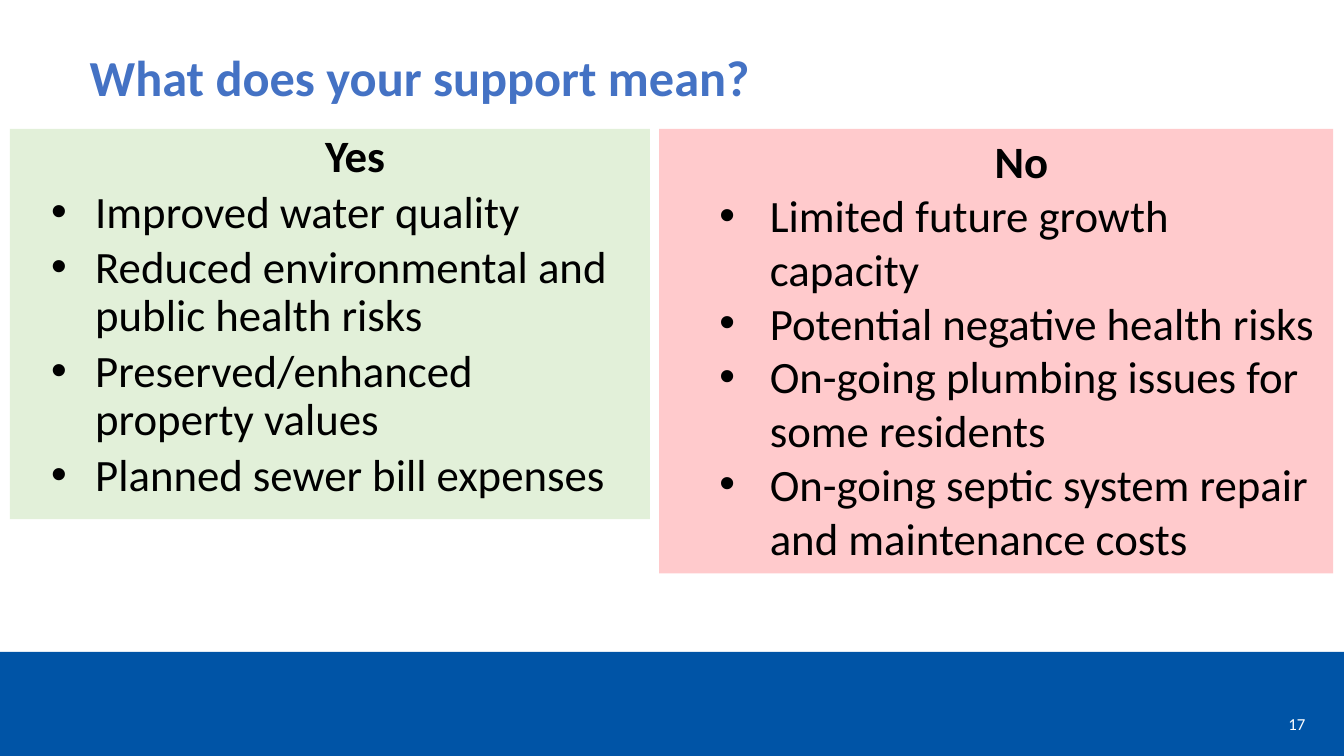
from lxml import etree
from pptx import Presentation
from pptx import util as u
from pptx.dml.color import RGBColor
from pptx.enum import shapes, text
from pptx.oxml.ns import qn

W, H = 33.87, 19.05
BAR_TOP = 16.43
PANEL_TOP = 3.25
TITLE = "What does your support mean?"
NUMBER = "17"
PANELS = [
    dict(head="Yes", left=0.25, width=16.13, height=9.83, fill="E2F0D9",
         alpha=None, indent=1.9, hang=1.11, spacing=0.9, before=5,
         items=["Improved water quality",
                "Reduced environmental and public health risks",
                "Preserved/enhanced property values",
                "Planned sewer bill expenses"]),
    dict(head="No", left=16.61, width=16.99, height=11.2, fill="FF7C80",
         alpha=40, indent=2.54, hang=1.27, spacing=1.0, before=0,
         items=["Limited future growth capacity",
                "Potential negative health risks",
                "On-going plumbing issues for some residents",
                "On-going septic system repair and maintenance costs"]),
]


def rgb(value):
    return RGBColor.from_string(value)


def add_rect(s, left, top, width, height, fill, alpha=None):
    sp = s.shapes.add_shape(shapes.MSO_SHAPE.RECTANGLE, u.Cm(left), u.Cm(top),
                            u.Cm(width), u.Cm(height))
    sp.shadow.inherit = False
    sp.fill.solid()
    sp.fill.fore_color.rgb = rgb(fill)
    sp.line.fill.background()
    if alpha is not None:
        clr = sp._element.spPr.find(qn("a:solidFill"))[0]
        etree.SubElement(clr, qn("a:alpha"), val=str(alpha * 1000))
    return sp


def add_box(s, left, top, width, height):
    sp = s.shapes.add_textbox(u.Cm(left), u.Cm(top), u.Cm(width), u.Cm(height))
    sp.text_frame.word_wrap = True
    sp.text_frame.vertical_anchor = text.MSO_ANCHOR.MIDDLE
    return sp


def write(tf, words, size=32, color="000000", bold=False, align="LEFT",
          indent=0, hang=0, spacing=1.0, before=0, bullet=False):
    first = not tf.paragraphs[0].runs
    p = tf.paragraphs[0] if first else tf.add_paragraph()
    pPr = p._p.get_or_add_pPr()
    pPr.set("marL", str(u.Cm(indent)))
    pPr.set("indent", str(-u.Cm(hang)))
    if bullet:
        etree.SubElement(pPr, qn("a:buFont"), typeface="Arial")
        etree.SubElement(pPr, qn("a:buChar"), char="•")
    p.alignment = getattr(text.PP_ALIGN, align)
    p.line_spacing = spacing
    p.space_before = u.Pt(0 if first else before)
    r = p.add_run()
    r.text = words
    r.font.name = "Calibri"
    r.font.size = u.Pt(size)
    r.font.bold = bold
    r.font.color.rgb = rgb(color)


def main():
    prs = Presentation()
    prs.slide_width, prs.slide_height = u.Cm(W), u.Cm(H)
    s = prs.slides.add_slide(prs.slide_layouts[6])

    add_rect(s, 0, BAR_TOP, W, H - BAR_TOP, "0054A6")
    write(add_box(s, 2.01, 0.18, 28.09, 3.68).text_frame, TITLE,
          size=36, color="4472C4", bold=True, spacing=0.9)
    write(add_box(s, 31.42, 17.73, 1.73, 1.02).text_frame, NUMBER,
          size=12, color="FFFFFF", align="RIGHT")

    for panel in PANELS:
        sp = add_rect(s, panel["left"], PANEL_TOP, panel["width"],
                      panel["height"], panel["fill"], panel["alpha"])
        tf = sp.text_frame
        tf.word_wrap = True
        tf.vertical_anchor = text.MSO_ANCHOR.TOP
        write(tf, panel["head"], bold=True, align="CENTER", indent=1.27,
              spacing=panel["spacing"])
        for item in panel["items"]:
            write(tf, item, indent=panel["indent"], hang=panel["hang"],
                  spacing=panel["spacing"], before=panel["before"], bullet=True)

    prs.save("out.pptx")


if __name__ == "__main__":
    main()
